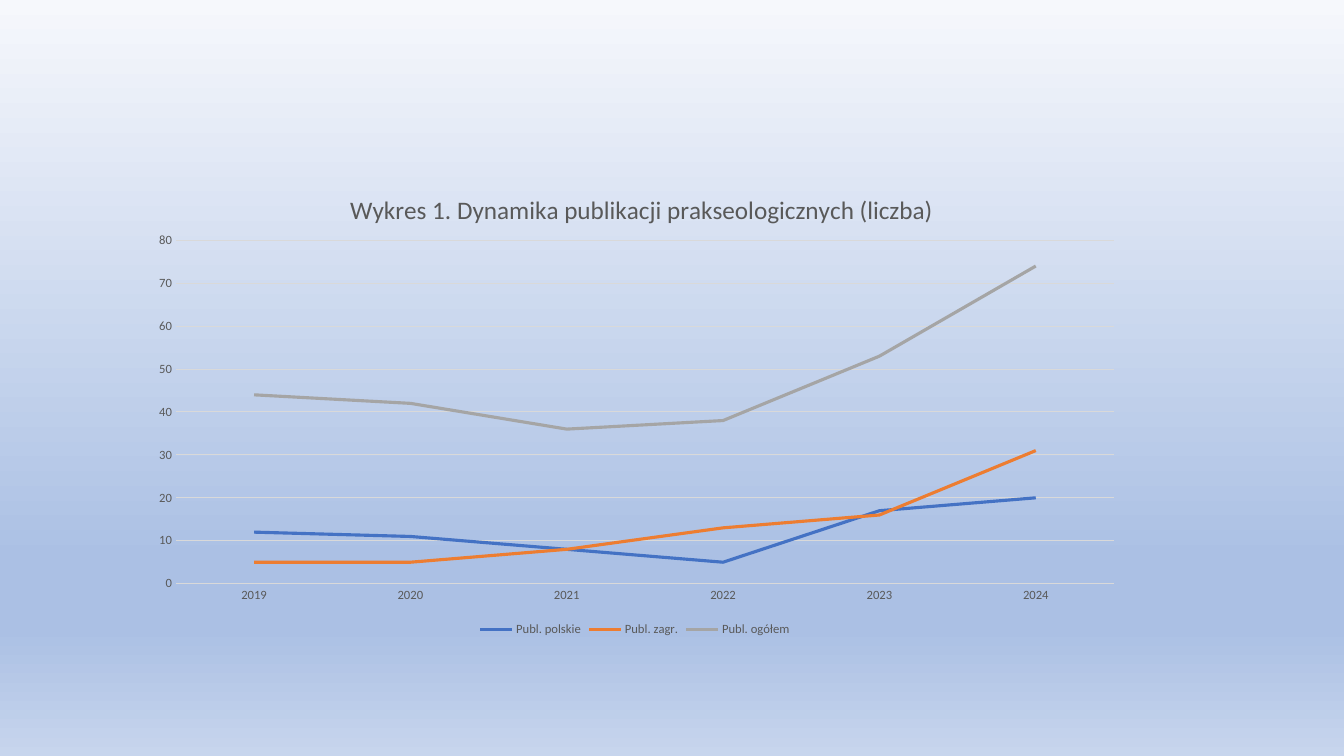
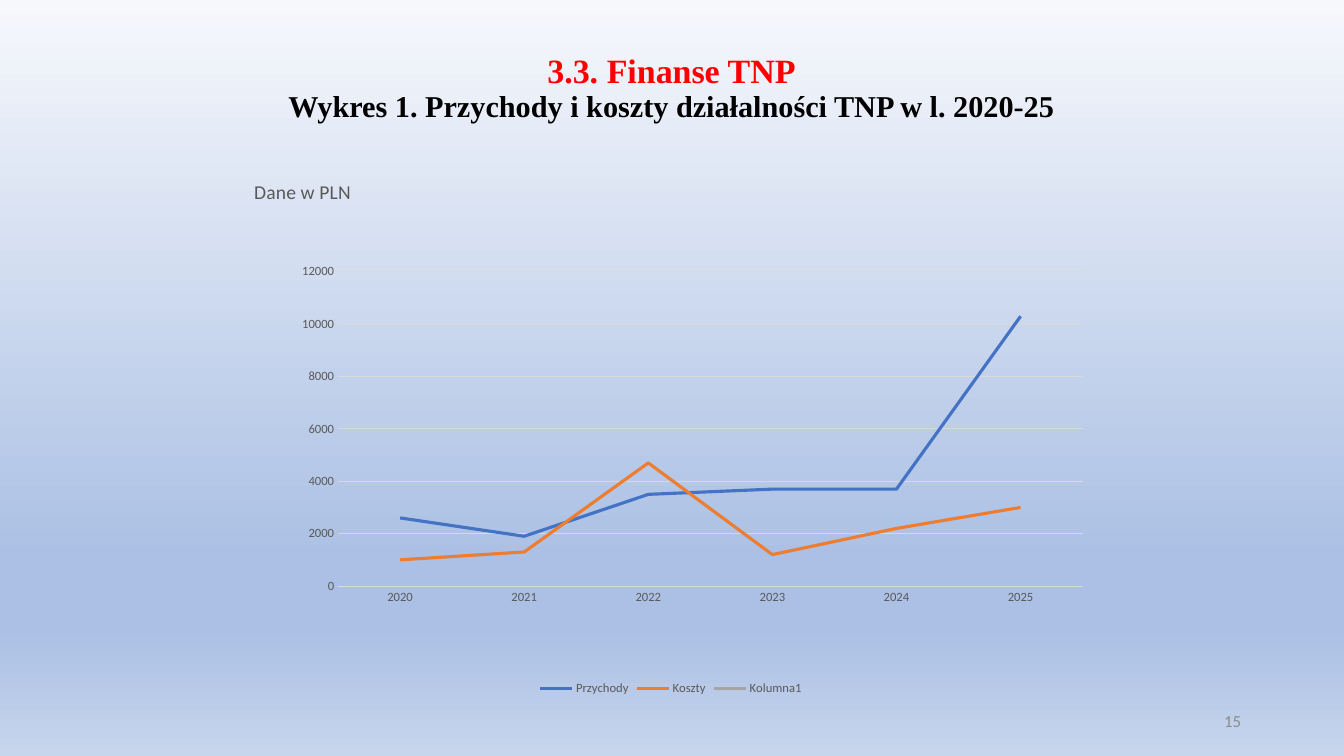
from dataclasses import dataclass

from lxml import etree
from pptx import Presentation
from pptx.chart.chart import Chart
from pptx.chart.data import CategoryChartData
from pptx.dml.color import RGBColor
from pptx.enum.chart import XL_CHART_TYPE, XL_LEGEND_POSITION, XL_TICK_MARK
from pptx.enum.text import MSO_ANCHOR, PP_ALIGN
from pptx.oxml.ns import qn
from pptx.slide import Slide
from pptx.util import Emu, Pt

LINE_CHART = XL_CHART_TYPE.LINE
LEGEND_BOTTOM = XL_LEGEND_POSITION.BOTTOM
NO_TICKS = XL_TICK_MARK.NONE
MIDDLE = MSO_ANCHOR.MIDDLE
CENTER, RIGHT = PP_ALIGN.CENTER, PP_ALIGN.RIGHT

SLIDE_WIDTH, SLIDE_HEIGHT = 1344, 756
EMU_PER_PX = 12192000 / SLIDE_WIDTH

BODY_FONT, HEADING_FONT = "Calibri", "Times New Roman"
RED, BLACK, PAGE_GREY = "FF0000", "000000", "8C8C8C"
LABEL_GREY, GRID_GREY = "595959", "D9D9D9"
SERIES_COLORS = ("4472C4", "ED7D31", "A5A5A5")
BACKGROUND_STOPS = ((0, "F6F8FC"), (74, "ABC0E4"), (83, "ABC0E4"), (100, "C7D5ED"))


@dataclass(frozen=True)
class Box:
    left: int
    top: int
    width: int
    height: int


@dataclass(frozen=True)
class TextLine:
    text: str
    size: float
    color: str
    font: str = BODY_FONT
    bold: bool = False


@dataclass(frozen=True)
class LineChart:
    box: Box
    title: str
    title_size: int
    title_at: dict[str, float]
    plot_at: dict[str, float]
    years: range
    series: dict[str, tuple]
    axis_max: int
    axis_step: int


PUBLICATIONS = LineChart(
    box=Box(136, 164, 998, 477),
    title="Wykres 1. Dynamika publikacji prakseologicznych (liczba)",
    title_size=18,
    title_at={"x": 0.21, "y": 0.05},
    plot_at={"x": 0.04, "y": 0.16, "w": 0.94, "h": 0.72},
    years=range(2019, 2025),
    series={
        "Publ. polskie": (12, 11, 8, 5, 17, 20),
        "Publ. zagr.": (5, 5, 8, 13, 16, 31),
        "Publ. ogółem": (44, 42, 36, 38, 53, 74),
    },
    axis_max=80,
    axis_step=10,
)

FINANCES = LineChart(
    box=Box(233, 158, 876, 542),
    title="Dane w PLN",
    title_size=14,
    title_at={"x": 0.02, "y": 0.03},
    plot_at={"x": 0.12, "y": 0.21, "w": 0.85, "h": 0.58},
    years=range(2020, 2026),
    series={
        "Przychody": (2600, 1900, 3500, 3700, 3700, 10300),
        "Koszty": (1000, 1300, 4700, 1200, 2200, 3000),
        "Kolumna1": (None,) * 6,
    },
    axis_max=12000,
    axis_step=2000,
)

FINANCE_HEADING = (
    TextLine("3.3. Finanse TNP", 24.3, RED, HEADING_FONT, True),
    TextLine("Wykres 1. Przychody i koszty działalności TNP w l. 2020-25",
             21.6, BLACK, HEADING_FONT, True),
)


def px(length: int) -> Emu:
    return Emu(round(length * EMU_PER_PX))


def rgb(color: str) -> RGBColor:
    return RGBColor.from_string(color)


def place(box: Box) -> tuple[Emu, Emu, Emu, Emu]:
    return px(box.left), px(box.top), px(box.width), px(box.height)


def style_font(font, size: float, color: str, name: str = BODY_FONT,
               bold: bool = False) -> None:
    font.size = Pt(size)
    font.name = name
    font.bold = bold
    font.color.rgb = rgb(color)


def add_gradient_slide(deck) -> Slide:
    slide = deck.slides.add_slide(deck.slide_layouts[6])
    fill = slide.background.fill
    fill.gradient()
    fill.gradient_angle = 270
    stops = slide.element.find(".//" + qn("a:gsLst"))
    for old_stop in list(stops):
        stops.remove(old_stop)
    for percent, color in BACKGROUND_STOPS:
        stop = etree.SubElement(stops, qn("a:gs"), pos=str(percent * 1000))
        etree.SubElement(stop, qn("a:srgbClr"), val=color)
    return slide


def add_text(slide: Slide, box: Box, lines: tuple[TextLine, ...], align,
             spacing: float = 1.0) -> None:
    frame = slide.shapes.add_textbox(*place(box)).text_frame
    frame.word_wrap = True
    frame.vertical_anchor = MIDDLE
    frame.text = "\n".join(line.text for line in lines)
    for paragraph, line in zip(frame.paragraphs, lines):
        paragraph.alignment = align
        paragraph.line_spacing = spacing
        style_font(paragraph.runs[0].font, line.size, line.color, line.font, line.bold)


def set_layout(parent, index: int, fractions: dict[str, float],
               inner: bool = False) -> None:
    """Fix the position of a chart part as fractions of the chart."""
    for old_layout in parent.findall(qn("c:layout")):
        parent.remove(old_layout)
    layout = etree.Element(qn("c:layout"))
    parent.insert(index, layout)
    manual = etree.SubElement(layout, qn("c:manualLayout"))
    if inner:
        etree.SubElement(manual, qn("c:layoutTarget"), val="inner")
    for axis in ("x", "y"):
        etree.SubElement(manual, qn(f"c:{axis}Mode"), val="edge")
    for key, fraction in fractions.items():
        etree.SubElement(manual, qn(f"c:{key}"), val=str(fraction))


def style_axes(chart: Chart, spec: LineChart) -> None:
    years, amounts = chart.category_axis, chart.value_axis
    for axis in (years, amounts):
        axis.major_tick_mark = axis.minor_tick_mark = NO_TICKS
        style_font(axis.tick_labels.font, 9, LABEL_GREY)
    amounts.minimum_scale = 0
    amounts.maximum_scale = spec.axis_max
    amounts.major_unit = spec.axis_step
    amounts.has_major_gridlines = True
    for line in (years.format.line, amounts.major_gridlines.format.line):
        line.color.rgb = rgb(GRID_GREY)
        line.width = Pt(0.75)
    amounts.format.line.fill.background()


def add_line_chart(slide: Slide, spec: LineChart) -> None:
    data = CategoryChartData()
    data.categories = [str(year) for year in spec.years]
    for name, values in spec.series.items():
        data.add_series(name, values)
    chart = slide.shapes.add_chart(LINE_CHART, *place(spec.box), data).chart
    style_font(chart.font, 10, BLACK)

    # Title and plot area
    chart.has_title = True
    title = chart.chart_title.text_frame
    title.text = spec.title
    style_font(title.paragraphs[0].runs[0].font, spec.title_size, LABEL_GREY)
    chart_root = chart.element.find(qn("c:chart"))
    set_layout(chart_root.find(qn("c:title")), 1, spec.title_at)
    set_layout(chart_root.find(qn("c:plotArea")), 0, spec.plot_at, inner=True)

    # Legend
    chart.has_legend = True
    chart.legend.position = LEGEND_BOTTOM
    chart.legend.include_in_layout = False
    style_font(chart.legend.font, 9, LABEL_GREY)

    # Axes and series
    style_axes(chart, spec)
    plot = chart.plots[0]
    plot.vary_by_categories = False
    for series, color in zip(plot.series, SERIES_COLORS):
        series.smooth = False
        series.format.line.color.rgb = rgb(color)
        series.format.line.width = Pt(2.25)


def main() -> None:
    deck = Presentation()
    deck.slide_width, deck.slide_height = px(SLIDE_WIDTH), px(SLIDE_HEIGHT)

    # Publications
    publications = add_gradient_slide(deck)
    add_line_chart(publications, PUBLICATIONS)

    # Finances
    finances = add_gradient_slide(deck)
    add_text(finances, Box(92, 40, 1159, 98), FINANCE_HEADING, CENTER, 0.9)
    add_text(finances, Box(949, 701, 302, 40), (TextLine("15", 12, PAGE_GREY),), RIGHT)
    add_line_chart(finances, FINANCES)

    deck.save("out.pptx")


if __name__ == "__main__":
    main()
